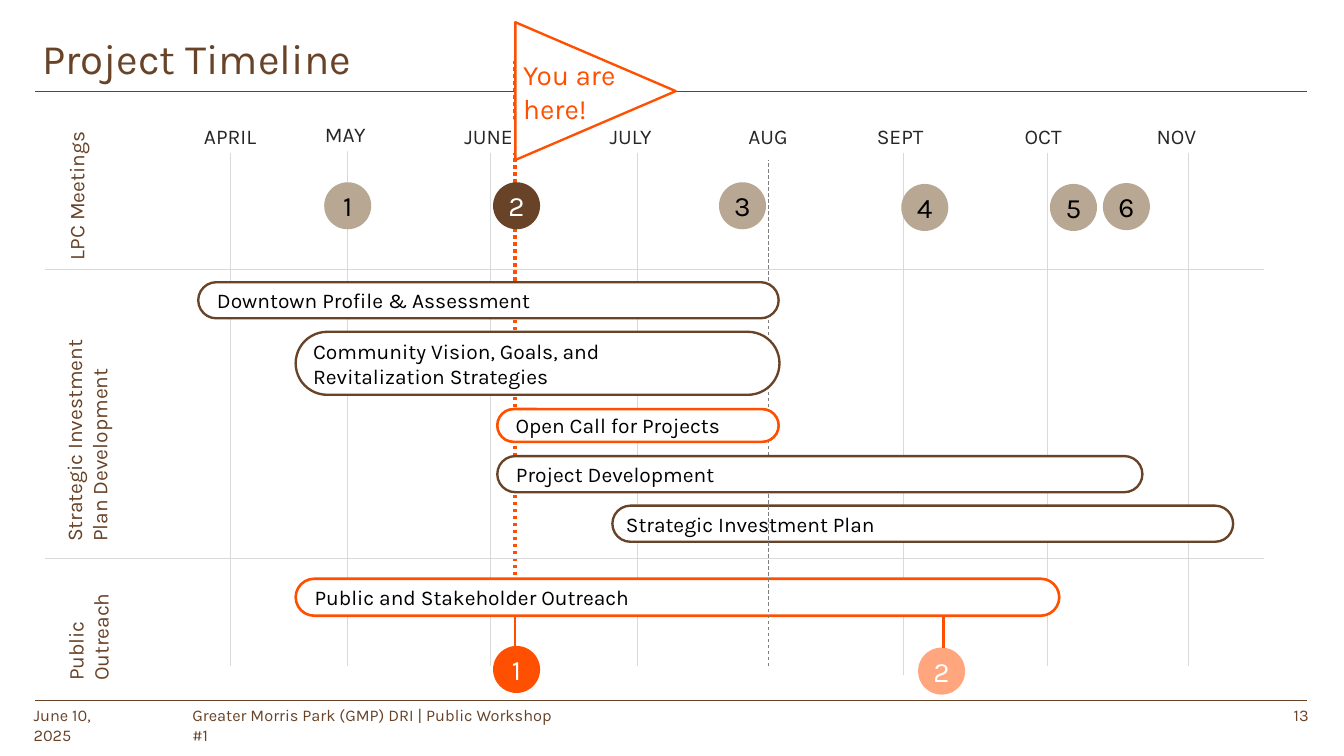
from lxml.etree import SubElement
from pptx import Presentation
from pptx.dml.color import RGBColor
from pptx.enum.dml import MSO_LINE
from pptx.enum.shapes import MSO_CONNECTOR, MSO_SHAPE
from pptx.enum.text import MSO_ANCHOR, MSO_AUTO_SIZE, PP_ALIGN
from pptx.oxml.ns import qn
from pptx.util import Inches, Pt

BROWN = RGBColor(0x68, 0x43, 0x28)
TAN = RGBColor(0xB8, 0xA7, 0x92)
ORANGE = RGBColor(0xFF, 0x4F, 0x00)
FLAME = RGBColor(0xFF, 0x50, 0x01)
WHITE = RGBColor(0xFF, 0xFF, 0xFF)
BLACK = RGBColor(0, 0, 0)
INK = RGBColor(0x26, 0x26, 0x26)
PALE = RGBColor(0xD9, 0xD9, 0xD9)
GREY = RGBColor(0x7F, 0x7F, 0x7F)
FONT = "Karla"

# Content; places are columns and rows of a 16 by 9 grid
COLS, ROWS = 16, 9
NOW = 6.13
EDGES = 0.42, 15.56
DOT = 0.56
GRID = [2.74, 4.13, 5.83, 7.58, 10.75, 12.47, 14.14]
MONTHS = [  # name, left, top, width
    ("APRIL", 2.33, 1.42, 1.05), ("MAY", 3.77, 1.4, 1),
    ("JUNE", 5.43, 1.42, 1.4), ("JULY", 7.16, 1.42, 1.4),
    ("AUG", 8.81, 1.42, 1.24), ("SEPT", 10.34, 1.42, 1.24),
    ("OCT", 12.1, 1.42, 0.99), ("NOV", 13.67, 1.42, 1.38),
]
LANES = [  # name, left, top, width, height before turning
    ("Strategic Investment Plan Development", -0.39, 4.77, 2.85, 0.71),
    ("LPC Meetings", -0.45, 1.64, 2.71, 0.4),
    ("Public Outreach", 0.33, 7.13, 1.44, 0.71),
]
MEETINGS = [  # number, left, top, fill, text colour
    ("1", 3.86, 2.17, TAN, BLACK), ("2", 5.87, 2.17, BROWN, WHITE),
    ("3", 8.56, 2.17, TAN, BLACK), ("4", 10.73, 2.19, TAN, BLACK),
    ("5", 12.5, 2.19, TAN, BLACK), ("6", 13.13, 2.18, TAN, BLACK),
]
EVENTS = [  # number, left, top, stem column, stem top, opacity
    ("1", 5.87, 7.69, NOW, 7.25, 100),
    ("2", 10.93, 7.71, 11.23, 7.11, 50),
]
BACK = [  # text, left, top, width, height, line, points, indent
    ("Strategic Investment Plan", 7.29, 6.02, 7.39, 0.43, BROWN, 2, 0.1),
    ("Public and Stakeholder Outreach",
     3.52, 6.89, 9.09, 0.44, FLAME, 2.25, 0.16),
]
FRONT = [
    ("Downtown Profile & Assessment",
     2.36, 3.36, 6.91, 0.43, BROWN, 2, 0.16),
    ("Community Vision, Goals, and\nRevitalization Strategies",
     3.52, 3.95, 5.76, 0.75, BROWN, 2, 0.1),
    ("Open Call for Projects", 5.92, 4.87, 3.35, 0.39, FLAME, 2.25, 0.16),
    ("Project Development", 5.92, 5.43, 7.68, 0.43, BROWN, 2, 0.16),
]
FOOT = [  # text, left, top, width, inset, alignment
    ("June 10, 2025", 0.35, 8.35, 1.26, 0.05, PP_ALIGN.LEFT),
    ("Greater Morris Park (GMP) DRI | Public Workshop #1",
     2.24, 8.35, 4.54, 0.05, PP_ALIGN.LEFT),
    ("13", 14.68, 8.34, 1, 0.1, PP_ALIGN.RIGHT),
]

deck = Presentation()
deck.slide_width, deck.slide_height = Inches(16), Inches(9)
CELL_W, CELL_H = deck.slide_width / COLS, deck.slide_height / ROWS
slide = deck.slides.add_slide(deck.slide_layouts[5])
shapes = slide.shapes


def place(x, y, w, h):
    return (round(x * CELL_W), round(y * CELL_H),
            round(w * CELL_W), round(h * CELL_H))


def write(item, text, size, color, align=PP_ALIGN.LEFT,
          anchor=MSO_ANCHOR.TOP, left=0.1, right=0.1):
    frame = item.text_frame
    frame.text = text
    frame.word_wrap = True
    frame.auto_size = MSO_AUTO_SIZE.NONE
    frame.vertical_anchor = anchor
    frame.margin_left, frame.margin_right = Inches(left), Inches(right)
    frame.margin_top = frame.margin_bottom = Inches(0.05)
    for para in frame.paragraphs:
        para.alignment = align
        for run in para.runs:
            run.font.name, run.font.size = FONT, Pt(size)
            run.font.color.rgb = color


def rule(x1, y1, x2, y2, color, width, dash=None):
    line = shapes.add_connector(
        MSO_CONNECTOR.STRAIGHT, *place(x1, y1, x2, y2))
    line.line.color.rgb, line.line.width = color, Pt(width)
    if dash:
        line.line.dash_style = dash
    SubElement(line.element.spPr, qn("a:effectLst"))


def draw(kind, box, fill, edge=None, width=1):
    item = shapes.add_shape(kind, *place(*box))
    item.shadow.inherit = False
    item.fill.solid()
    item.fill.fore_color.rgb = fill
    if edge is None:
        item.line.fill.background()
    else:
        item.line.color.rgb, item.line.width = edge, Pt(width)
    return item


def disc(num, x, y, fill, color, alpha=100):
    item = draw(MSO_SHAPE.OVAL, (x, y, DOT, DOT), fill)
    write(item, num, 24, color, PP_ALIGN.CENTER, MSO_ANCHOR.MIDDLE)
    if alpha < 100:
        tone = item.element.spPr.find(qn("a:solidFill"))[0]
        SubElement(tone, qn("a:alpha"), val=str(alpha * 1000))


def bars(rows):
    for text, x, y, w, h, edge, width, indent in rows:
        bar = draw(MSO_SHAPE.ROUNDED_RECTANGLE, (x, y, w, h),
                   WHITE, edge, width)
        bar.adjustments[0] = 0.5
        write(bar, text, 18, BLACK, anchor=MSO_ANCHOR.MIDDLE, left=indent)


# Footer
for text, x, y, w, inset, align in FOOT:
    note = shapes.add_textbox(*place(x, y, w, 0.34))
    write(note, text, 14, BROWN, align, left=inset, right=inset)
rule(EDGES[0], 8.34, EDGES[1], 8.34, BROWN, 0.75)

# Today line and month grid
rule(NOW, 6.85, NOW, 0.73, FLAME, 3, MSO_LINE.ROUND_DOT)
for x in GRID:
    drop = 0.11 if x == 10.75 else 0
    rule(x, 7.93 + drop, x, 1.52 + drop, PALE, 0.25)

# Lane names
for text, *box in LANES:
    lane = draw(MSO_SHAPE.RECTANGLE, box, WHITE)
    lane.rotation = 270
    write(lane, text, 18, BROWN)

# Meetings and outreach events
for meeting in MEETINGS:
    disc(*meeting)
for num, x, y, stem, top, alpha in EVENTS:
    rule(stem, top, stem, top + 0.6, ORANGE, 2.25)
    disc(num, x, y, ORANGE, WHITE, alpha)
bars(BACK)

# Month names
for text, x, y, w in MONTHS:
    month = draw(MSO_SHAPE.RECTANGLE, (x, y, w, 0.4), WHITE)
    write(month, text, 18, INK)

# Title, raised above the lane names, and its rule
title = shapes.title
title.left, title.top, title.width, title.height = place(
    0.4, 0.34, 12.91, 0.71)
write(title, "Project Timeline", 36, BROWN)
title.element.getparent().append(title.element)
rule(EDGES[0], 1.09, EDGES[1], 1.09, BROWN, 0.75)

# August mark, front bars, lane rules
rule(9.15, 7.93, 9.15, 1.91, GREY, 0.75, MSO_LINE.DASH)
bars(FRONT)
for y in (3.21, 6.65):
    rule(0.53, y, 15.05, y, PALE, 0.25)

# Flag
flag = draw(MSO_SHAPE.ISOSCELES_TRIANGLE, (6.27, 0.13, 1.64, 1.91),
            WHITE, FLAME, 2)
flag.rotation = 90
label = shapes.add_textbox(*place(NOW, 0.64, 1.82, 0.91))
write(label, "You are here!", 24, FLAME)

deck.save("out.pptx")
